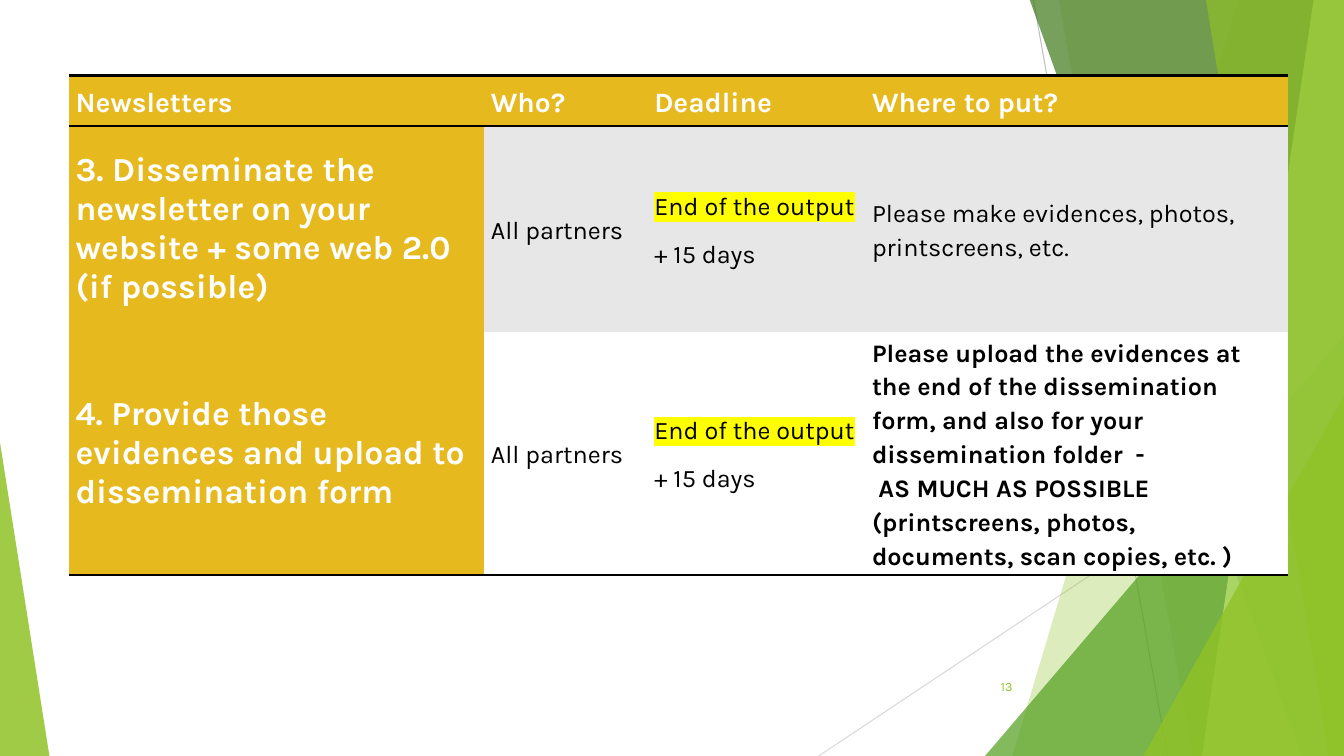
from dataclasses import dataclass

from lxml.etree import SubElement
from pptx import Presentation
from pptx.dml.color import RGBColor
from pptx.enum.shapes import MSO_CONNECTOR, MSO_SHAPE
from pptx.enum.text import MSO_ANCHOR, PP_ALIGN
from pptx.oxml import parse_xml
from pptx.oxml.ns import nsdecls, qn
from pptx.util import Inches, Pt


@dataclass(frozen=True)
class Theme:
    """Colours, type sizes and font of the slide."""
    font: str = "Karla"
    green: str = "90C226"
    mid_green: str = "54A021"
    dark_green: str = "3F7819"
    pale_green: str = "C0E474"
    gold: str = "E6B91E"
    grey: str = "E7E7E7"
    white: str = "FFFFFF"
    black: str = "000000"
    marker: str = "FFFF00"
    line: str = "BFBFBF"
    pale_line: str = "D9D9D9"
    head_size: int = 20
    task_size: int = 24
    body_size: int = 18
    number_size: int = 9


THEME = Theme()
WIDTH, HEIGHT, TOP = 13.33, 7.5, -0.01
COLUMNS = (4.12, 1.62, 2.16, 4.2)
ROWS = (0.5, 2.04, 2.05)
HEADINGS = ("Newsletters", "Who?", "Deadline", "Where to put?")
DEADLINE = ("End of the output", "+ 15 days")
TASKS = (
    ("3. Disseminate the newsletter on your website + some web 2.0 (if possible)",
     "Please make evidences, photos, printscreens, etc.", THEME.grey, False),
    ("4. Provide those evidences and upload to dissemination form",
     "Please upload the evidences at the end of the dissemination form, and also "
     "for your dissemination folder  -\n AS MUCH AS POSSIBLE (printscreens, photos, "
     "documents, scan copies, etc. )", THEME.white, True),
)


def paint(sp, color, opacity):
    """Give a shape a translucent fill with no line or shadow."""
    sp.shadow.inherit = False
    sp.fill.solid()
    sp.fill.fore_color.rgb = RGBColor.from_string(color)
    clr = sp.fill._xPr.find(qn("a:solidFill"))[0]
    SubElement(clr, qn("a:alpha")).set("val", str(opacity * 1000))
    sp.line.fill.background()


def add_ray(s, start, end, color):
    """Draw a thin background line."""
    c = s.shapes.add_connector(MSO_CONNECTOR.STRAIGHT, *map(Inches, start + end))
    c.line.color.rgb = RGBColor.from_string(color)
    c.line.width = Pt(0.75)
    SubElement(c._element.spPr, qn("a:effectLst"))


def add_facet(s, top_x, bottom_x, color, opacity):
    """Draw a full-height panel from a slanted edge to the right of the slide."""
    fb = s.shapes.build_freeform(Inches(top_x), Inches(TOP))
    corners = ((WIDTH, TOP), (WIDTH, HEIGHT), (bottom_x, HEIGHT))
    fb.add_line_segments([(Inches(x), Inches(y)) for x, y in corners], close=True)
    paint(fb.convert_to_shape(), color, opacity)


def add_peak(s, left, top, width, apex, color, opacity):
    """Draw a right triangle standing on the bottom edge of the slide."""
    sp = s.shapes.add_shape(MSO_SHAPE.ISOSCELES_TRIANGLE, Inches(left), Inches(top),
                            Inches(width), Inches(HEIGHT - top))
    sp.adjustments[0] = apex
    paint(sp, color, opacity)


def style_runs(p, size, color, bold=False):
    """Format every run of a paragraph."""
    for r in p.runs:
        r.font.size = Pt(size)
        r.font.bold = bold
        r.font.color.rgb = RGBColor.from_string(color)
        r.font.name = THEME.font


def highlight(r, color):
    """Mark a run with a background colour."""
    mark = parse_xml(f'<a:highlight {nsdecls("a")}><a:srgbClr val="{color}"/></a:highlight>')
    r.font._element.find(qn("a:solidFill")).addnext(mark)


def set_borders(cell, ruled):
    """Rule the named sides of a cell in black and clear the others."""
    for i, side in enumerate("LRTB"):
        fill = (f'<a:solidFill><a:srgbClr val="{THEME.black}"/></a:solidFill>'
                if side in ruled else "<a:noFill/>")
        ln = parse_xml(f'<a:ln{side} {nsdecls("a")} w="{Pt(2)}">{fill}</a:ln{side}>')
        cell._tc.get_or_add_tcPr().insert(i, ln)


def fill_cell(cell, lines, fill, size, color, bold, ruled, spaced=True):
    """Write and format one table cell."""
    cell.fill.solid()
    cell.fill.fore_color.rgb = RGBColor.from_string(fill)
    cell.vertical_anchor = MSO_ANCHOR.MIDDLE
    cell.margin_left = cell.margin_right = Inches(0.07)
    cell.margin_top = cell.margin_bottom = 0
    set_borders(cell, ruled)
    tf = cell.text_frame
    for i, line in enumerate(lines):
        p = tf.add_paragraph() if i else tf.paragraphs[0]
        p.text = line
        if spaced:
            p.line_spacing = 1.15
            p.space_after = Pt(10)
        style_runs(p, size, color, bold)


def add_task_table(s):
    """Build the table of newsletter tasks."""
    table = s.shapes.add_table(len(ROWS), len(COLUMNS), Inches(0.68), Inches(0.75),
                               Inches(sum(COLUMNS)), Inches(sum(ROWS))).table
    table.horz_banding = False
    for column, width in zip(table.columns, COLUMNS):
        column.width = Inches(width)
    for row, height in zip(table.rows, ROWS):
        row.height = Inches(height)
    for i, heading in enumerate(HEADINGS):
        fill_cell(table.cell(0, i), [heading], THEME.gold, THEME.head_size,
                  THEME.white, True, "TB")
    for i, (task, place, fill, bold) in enumerate(TASKS, 1):
        ruled = "T" if i == 1 else "B"
        fill_cell(table.cell(i, 0), [task], THEME.gold, THEME.task_size,
                  THEME.white, True, ruled, spaced=False)
        details = ((["All partners"], False), (DEADLINE, False), ([place], bold))
        for j, (lines, strong) in enumerate(details, 1):
            fill_cell(table.cell(i, j), lines, fill, THEME.body_size,
                      THEME.black, strong, ruled)
        highlight(table.cell(i, 2).text_frame.paragraphs[0].runs[0], THEME.marker)


def add_slide_number(s, number):
    """Write the slide number."""
    tf = s.shapes.add_textbox(Inches(9.39), Inches(6.61), Inches(0.75), Inches(0.4)).text_frame
    tf.word_wrap = True
    tf.vertical_anchor = MSO_ANCHOR.MIDDLE
    p = tf.paragraphs[0]
    p.text = number
    p.alignment = PP_ALIGN.RIGHT
    style_runs(p, THEME.number_size, THEME.green)


def add_background(s):
    """Draw the green facets behind the table."""
    add_ray(s, (10.25, 0), (11.58, HEIGHT), THEME.line)
    add_ray(s, (WIDTH, 4.03), (8.12, HEIGHT), THEME.pale_line)
    add_facet(s, 12.28, 10.04, THEME.green, 30)
    add_facet(s, 10.5, 11.83, THEME.green, 20)
    add_peak(s, 9.77, 3.33, 3.56, 1, THEME.mid_green, 72)
    add_facet(s, 10.21, 12.91, THEME.dark_green, 70)
    add_facet(s, 13.03, 11.92, THEME.pale_green, 70)
    add_facet(s, 11.96, 13.18, THEME.green, 65)
    add_peak(s, 11.34, 3.93, 1.99, 1, THEME.green, 80)
    add_peak(s, 0, 4.39, 0.49, 0, THEME.green, 85)


def main():
    """Build and save the slide."""
    prs = Presentation()
    prs.slide_width, prs.slide_height = Inches(WIDTH), Inches(HEIGHT)
    s = prs.slides.add_slide(prs.slide_layouts[6])
    add_background(s)
    add_slide_number(s, "13")
    add_task_table(s)
    prs.save("out.pptx")


if __name__ == "__main__":
    main()
